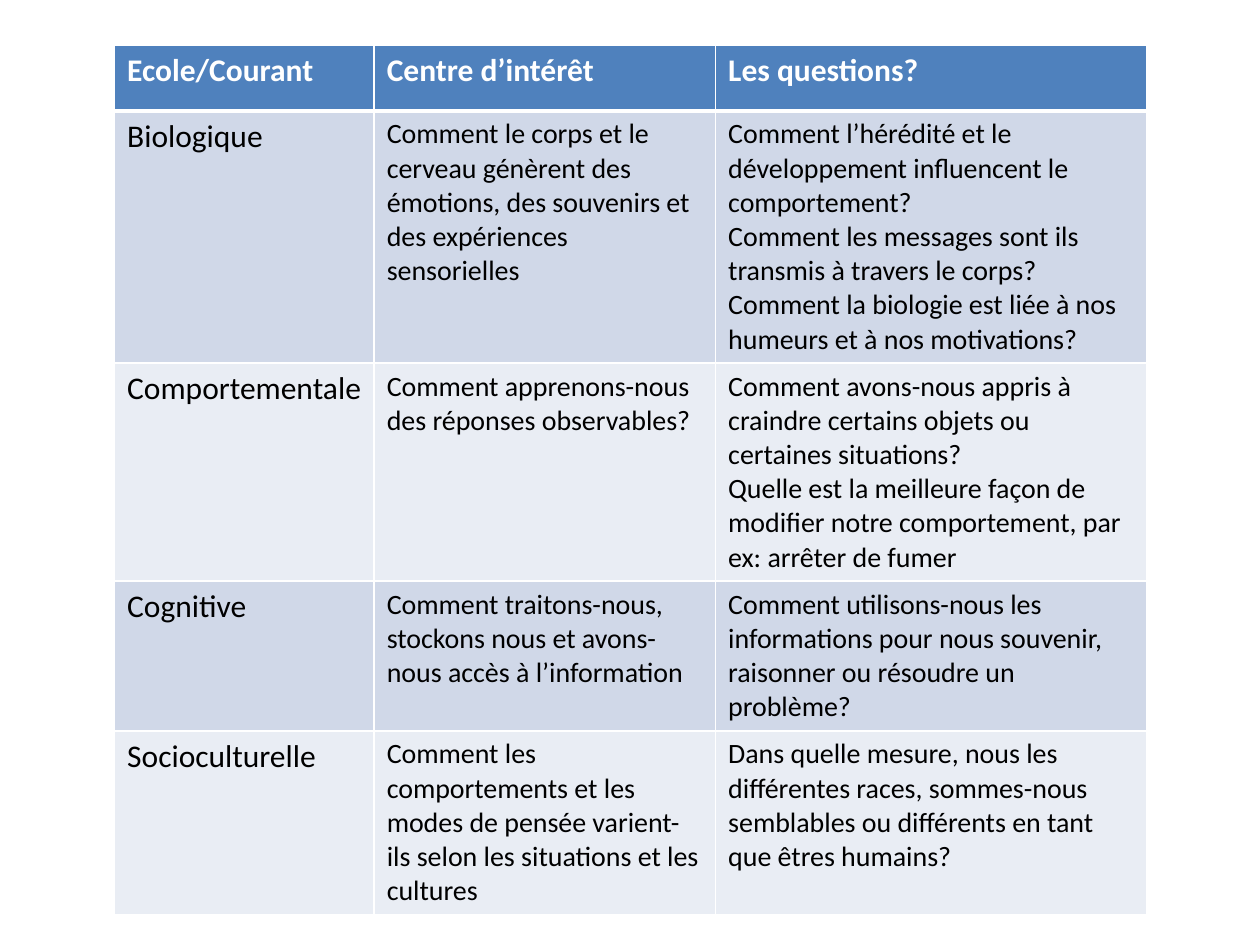
from pptx import Presentation
from pptx.dml.color import RGBColor
from pptx.oxml.ns import qn
from pptx.util import Inches, Pt
from lxml import etree

FONT = "Calibri"
COLORS = {
    "head": "4F81BD",
    "odd": "D0D8E8",
    "even": "E9EDF4",
    "white": "FFFFFF",
    "black": "000000",
}
COLS = [2.06, 2.71, 3.42]
ROWS = [0.52, 2, 1.73, 1.19, 1.45]

# One tuple per row; each line of a cell is a paragraph
TEXTS = [
    ("Ecole/Courant", "Centre d’intérêt", "Les questions?"),
    ("Biologique",
     "Comment le corps et le cerveau génèrent des émotions, "
     "des souvenirs et des expériences sensorielles",
     "Comment l’hérédité et le développement influencent le comportement?\n"
     "Comment les messages sont ils transmis à travers le corps?\n"
     "Comment la biologie est liée à nos humeurs et à nos motivations?"),
    ("Comportementale",
     "Comment apprenons-nous des réponses observables?",
     "Comment avons-nous appris à craindre certains objets "
     "ou certaines situations?\n"
     "Quelle est la meilleure façon de modifier notre comportement, "
     "par ex: arrêter de fumer"),
    ("Cognitive",
     "Comment traitons-nous, stockons nous et avons-nous "
     "accès à l’information",
     "Comment utilisons-nous les informations pour nous souvenir, "
     "raisonner ou résoudre un problème?"),
    ("Socioculturelle",
     "Comment les comportements et les modes de pensée varient-ils "
     "selon les situations et les cultures",
     "Dans quelle mesure, nous les différentes races, sommes-nous "
     "semblables ou différents en tant que êtres humains?"),
]


def rgb(name):
    return RGBColor.from_string(COLORS[name])


def add_edges(cell, row):
    """White cell borders, thicker between the header and the body."""
    thick = {(0, "B"), (1, "T")}
    props = cell._tc.get_or_add_tcPr()
    for side in "LRTB":
        width = Pt(3 if (row, side) in thick else 1)
        line = etree.SubElement(props, qn(f"a:ln{side}"), w=str(width))
        fill = etree.SubElement(line, qn("a:solidFill"))
        etree.SubElement(fill, qn("a:srgbClr"), val=COLORS["white"])


def write_text(cell, text, size, color, bold):
    frame = cell.text_frame
    for i, line in enumerate(text.split("\n")):
        para = frame.add_paragraph() if i else frame.paragraphs[0]
        run = para.add_run()
        run.text = line
        font = run.font
        font.name = FONT
        font.size = Pt(size)
        font.bold = bold
        font.color.rgb = rgb(color)


def fill_cell(cell, text, row, col):
    head = row == 0
    add_edges(cell, row)
    cell.fill.solid()
    cell.fill.fore_color.rgb = rgb(
        "head" if head else "odd" if row % 2 else "even")
    size = 18 if head or col == 0 else 16
    write_text(cell, text, size, "white" if head else "black", head)


def add_grid(slide):
    table = slide.shapes.add_table(
        len(ROWS), len(COLS), Inches(0.91), Inches(0.36),
        Inches(sum(COLS)), Inches(sum(ROWS))).table
    for col, width in zip(table.columns, COLS):
        col.width = Inches(width)
    for row, height in zip(table.rows, ROWS):
        row.height = Inches(height)
    for r, texts in enumerate(TEXTS):
        for c, text in enumerate(texts):
            fill_cell(table.cell(r, c), text, r, c)


def main():
    deck = Presentation()
    deck.slide_width = Inches(10)
    deck.slide_height = Inches(7.5)
    slide = deck.slides.add_slide(deck.slide_layouts[6])
    # Table of schools of thought
    add_grid(slide)
    deck.save("out.pptx")


if __name__ == "__main__":
    main()
